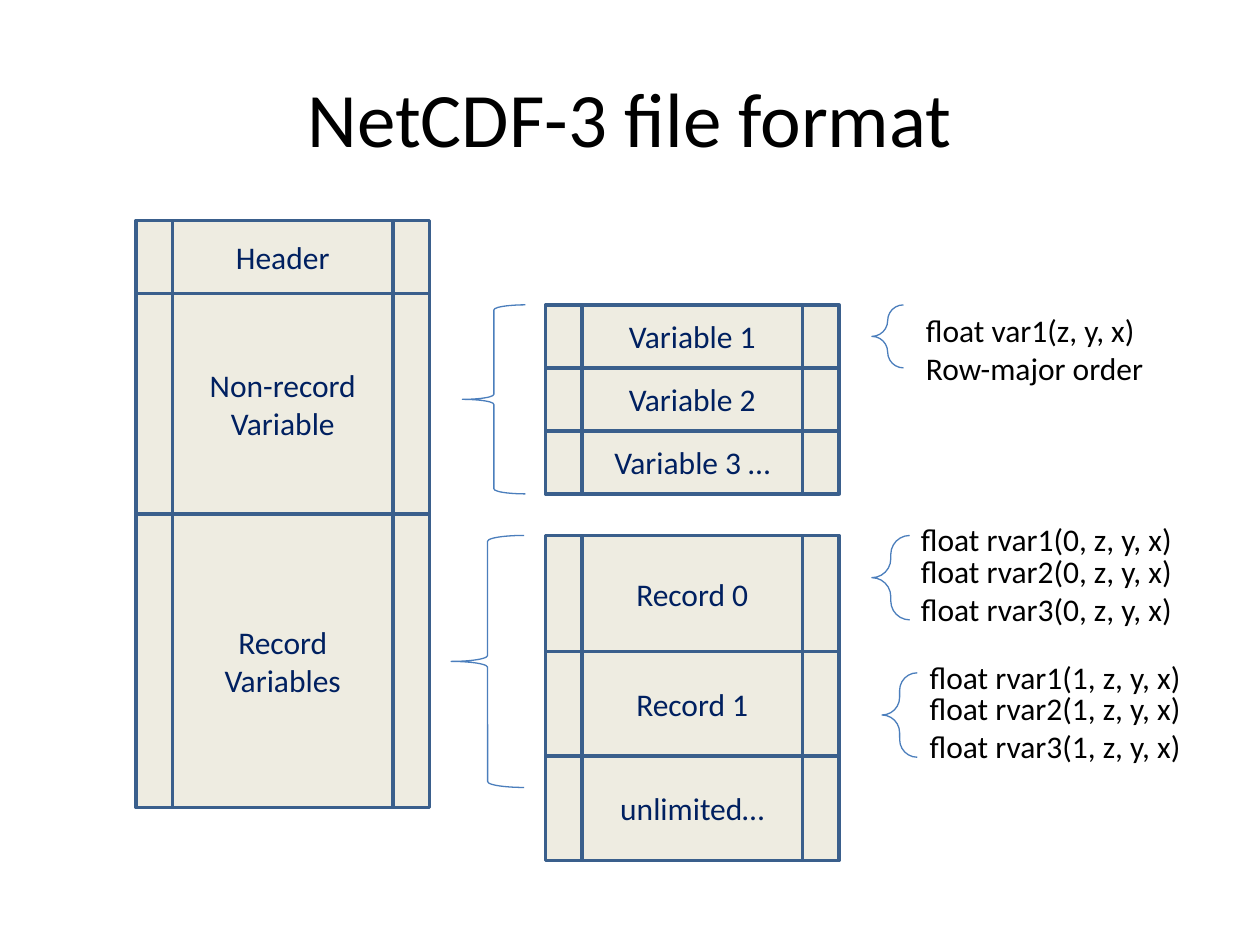
from pptx import Presentation
from pptx.dml.color import RGBColor
from pptx.enum.shapes import MSO_SHAPE
from pptx.enum.text import MSO_ANCHOR, MSO_AUTO_SIZE, PP_ALIGN
from pptx.util import Inches, Pt

HUES = {"ink": "000000", "navy": "002060", "sand": "EEECE1",
        "edge": "3A5F8C", "brace": "4B7EBC"}
TITLE = {"name": "Calibri", "size": Pt(44)}
BODY = {"name": "Calibri", "size": Pt(18)}
WIDTH = 2.33

# Each stack: left, top, then (label, height) from the top down
STACKS = [
    (1.08, 1.75, [("Header", 0.58), ("Non-record\nVariable", 1.75),
                  ("Record Variables", 2.33)]),
    (4.33, 2.42, [("Variable 1", 0.5), ("Variable 2", 0.5),
                  ("Variable 3 …", 0.5)]),
    (4.33, 4.25, [("Record 0", 0.92), ("Record 1", 0.83),
                  ("unlimited…", 0.83)]),
]

# Each record: index, text left, text top, text width, brace left, brace width
RECORDS = [(0, 7.21, 4.08, 2.62, 6.92, 0.3),
           (1, 7.28, 5.17, 2.47, 7, 0.28)]


def color(name):
    return RGBColor.from_string(HUES[name])


def write(frame, text, form, hue, align):
    frame.text = text
    for para in frame.paragraphs:
        para.alignment = align
        for key, value in form.items():
            setattr(para.font, key, value)
        para.font.color.rgb = color(hue)


def add_form(shapes, kind, box, hue, width):
    """Add a preset shape with a plain outline and no shadow."""
    shape = shapes.add_shape(kind, *map(Inches, box))
    shape.shadow.inherit = False
    shape.line.color.rgb = color(hue)
    shape.line.width = Pt(width)
    return shape


def add_stack(shapes, left, top, cells):
    for label, height in cells:
        cell = add_form(shapes, MSO_SHAPE.FLOWCHART_PREDEFINED_PROCESS,
                        (left, top, WIDTH, height), "edge", 2)
        cell.fill.solid()
        cell.fill.fore_color.rgb = color("sand")
        cell.text_frame.vertical_anchor = MSO_ANCHOR.MIDDLE
        write(cell.text_frame, label, BODY, "navy", PP_ALIGN.CENTER)
        top += height


def add_brace(shapes, box, curl=0.08):
    brace = add_form(shapes, MSO_SHAPE.LEFT_BRACE, box, "brace", 0.75)
    brace.fill.background()
    brace.adjustments[0] = curl
    brace.adjustments[1] = 0.5


def add_note(shapes, box, text, wrap=True):
    frame = shapes.add_textbox(*map(Inches, box)).text_frame
    frame.word_wrap = wrap
    frame.auto_size = MSO_AUTO_SIZE.SHAPE_TO_FIT_TEXT
    write(frame, text, BODY, "ink", PP_ALIGN.LEFT)


def add_record(shapes, index, left, top, width, edge, span):
    """Group the three variables of one record with their brace."""
    group = shapes.add_group_shape().shapes
    first, *rest = [f"float rvar{n}({index}, z, y, x)" for n in (1, 2, 3)]
    add_note(group, (left, top + 0.25, width, 0.7), "\n".join(rest))
    add_note(group, (left, top, width, 0.4), first)
    add_brace(group, (edge, top + 0.17, span, 0.67), 0.5)


def main():
    deck = Presentation()
    deck.slide_width, deck.slide_height = Inches(10), Inches(7.5)
    shapes = deck.slides.add_slide(deck.slide_layouts[5]).shapes

    title = shapes.title
    place = {"left": 0.5, "top": 0.3, "width": 9, "height": 1.25}
    for key, value in place.items():
        setattr(title, key, Inches(value))
    title.text_frame.vertical_anchor = MSO_ANCHOR.MIDDLE
    write(title.text_frame, "NetCDF-3 file format", TITLE, "ink",
          PP_ALIGN.CENTER)

    for stack in STACKS:
        add_stack(shapes, *stack)
    add_brace(shapes, (3.67, 2.42, 0.5, 1.5))
    add_brace(shapes, (3.58, 4.25, 0.58, 2))

    add_note(shapes, (7.25, 2.42, 1.95, 0.71),
             "float var1(z, y, x)\nRow-major order", wrap=False)
    add_brace(shapes, (6.92, 2.42, 0.25, 0.5), 0.5)
    for record in RECORDS:
        add_record(shapes, *record)

    deck.save("out.pptx")


if __name__ == "__main__":
    main()
